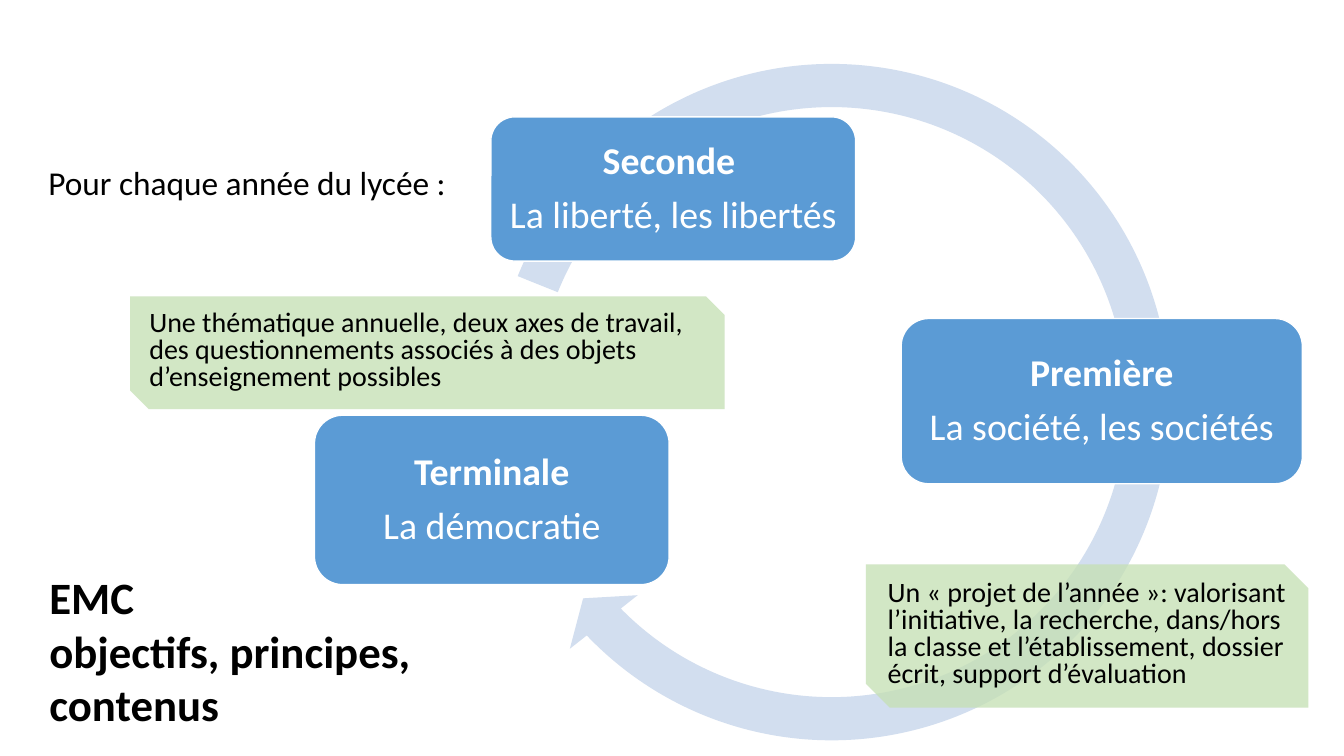
from lxml.etree import SubElement
from pptx import Presentation
from pptx.dml.color import RGBColor
from pptx.enum.shapes import MSO_SHAPE
from pptx.enum.text import MSO_ANCHOR, MSO_AUTO_SIZE, PP_ALIGN
from pptx.oxml.ns import qn
from pptx.util import Pt

FONT = "Calibri"
BLUE, PALE, GREEN = "5B9BD5", "D2DEEF", "C5E0B4"
WHITE, BLACK = "FFFFFF", "000000"


def color(code):
    return RGBColor.from_string(code)


class Page:
    """Style and current slide; every box is (left, top, width, height) in points."""

    def __init__(self, deck):
        self.slide = deck.slides.add_slide(deck.slide_layouts[1])

    def shape(self, kind, box, fill):
        item = self.slide.shapes.add_shape(kind, *map(Pt, box))
        item.shadow.inherit = False
        item.fill.solid()
        item.fill.fore_color.rgb = color(fill)
        item.line.fill.background()
        return item

    def style(self, par, size, ink=BLACK, bold=False, align=PP_ALIGN.LEFT,
              line=1.0, before=0, after=0):
        font = par.font
        font.name, font.size, font.bold = FONT, Pt(size), bold
        font.color.rgb = color(ink)
        par.alignment, par.line_spacing = align, line
        par.space_before, par.space_after = Pt(before), Pt(after)

    def holder(self, item, box, text):
        item.left, item.top, item.width, item.height = map(Pt, box)
        frame = item.text_frame
        frame.text = text
        frame.word_wrap = True
        frame.auto_size = MSO_AUTO_SIZE.NONE
        frame.vertical_anchor = MSO_ANCHOR.TOP
        return frame.paragraphs[0]

    def title(self, box, text):
        par = self.holder(self.slide.shapes.title, box, text)
        self.style(par, 32, bold=True)

    def body(self, box, text):
        par = self.holder(self.slide.placeholders[1], box, text)
        self.style(par, 23.8, line=0.8, before=10)
        props = par._p.get_or_add_pPr()
        props.set("marL", "0")
        props.set("indent", "0")
        # The bullet mark has to stand before the default run style
        none = SubElement(props, qn("a:buNone"))
        props.find(qn("a:defRPr")).addprevious(none)

    def ring(self, box, turn, shape):
        item = self.shape(MSO_SHAPE.CIRCULAR_ARROW, box, PALE)
        item.rotation = turn
        for i, value in enumerate(shape):
            item.adjustments[i] = value

    def card(self, box, year, theme):
        item = self.shape(MSO_SHAPE.ROUNDED_RECTANGLE, box, BLUE)
        item.line.color.rgb = color(WHITE)
        item.line.width = Pt(1)
        frame = item.text_frame
        frame.word_wrap = True
        frame.vertical_anchor = MSO_ANCHOR.MIDDLE
        frame.margin_left = frame.margin_right = Pt(8)
        frame.margin_top = frame.margin_bottom = Pt(8)
        frame.text = f"{year}\n{theme}"
        for par, bold in zip(frame.paragraphs, (True, False)):
            self.style(par, 27, WHITE, bold, PP_ALIGN.CENTER, 0.9, after=9.45)

    def note(self, box, text):
        item = self.shape(MSO_SHAPE.SNIP_2_DIAG_RECTANGLE, box, GREEN)
        tint = item.fill._xPr.find(qn("a:solidFill"))[0]
        SubElement(tint, qn("a:alpha")).set("val", "77000")
        frame = item.text_frame
        frame.word_wrap = True
        frame.vertical_anchor = MSO_ANCHOR.TOP
        frame.text = text
        self.style(frame.paragraphs[0], 20, line=0.8, before=10)


def main():
    deck = Presentation()
    deck.slide_width, deck.slide_height = Pt(960), Pt(540)
    page = Page(deck)

    # Heading and lead-in
    page.title((28, 403.2, 323.3, 123.8), "EMC \vobjectifs, principes, contenus")
    page.body((27.4, 118, 324, 44.6), "Pour chaque année du lycée :")

    # Cycle of the three years
    page.ring((337, 30.2, 514, 514), 270, (0.06, 3.41, 135.61, 175.12, 0.06))
    for box, year, theme in (
        ((350.6, 83.5, 260.6, 103), "Seconde ", "La liberté, les libertés"),
        ((643.7, 227.5, 286.6, 118.1), "Première", "La société, les sociétés"),
        ((224.6, 296.6, 253.4, 121), "Terminale", "La démocratie"),
    ):
        page.card(box, year, theme)

    # Green notes
    page.note((92.9, 211.7, 424.8, 80.6),
              "Une thématique annuelle, deux axes de travail, des questionnements "
              "associés à des objets d’enseignement possibles")
    page.note((618.5, 403.2, 316.1, 102.2),
              "Un « projet de l’année »: valorisant l’initiative, la recherche, "
              "dans/hors la classe et l’établissement, dossier écrit, "
              "support d’évaluation")

    deck.save("out.pptx")


if __name__ == "__main__":
    main()
